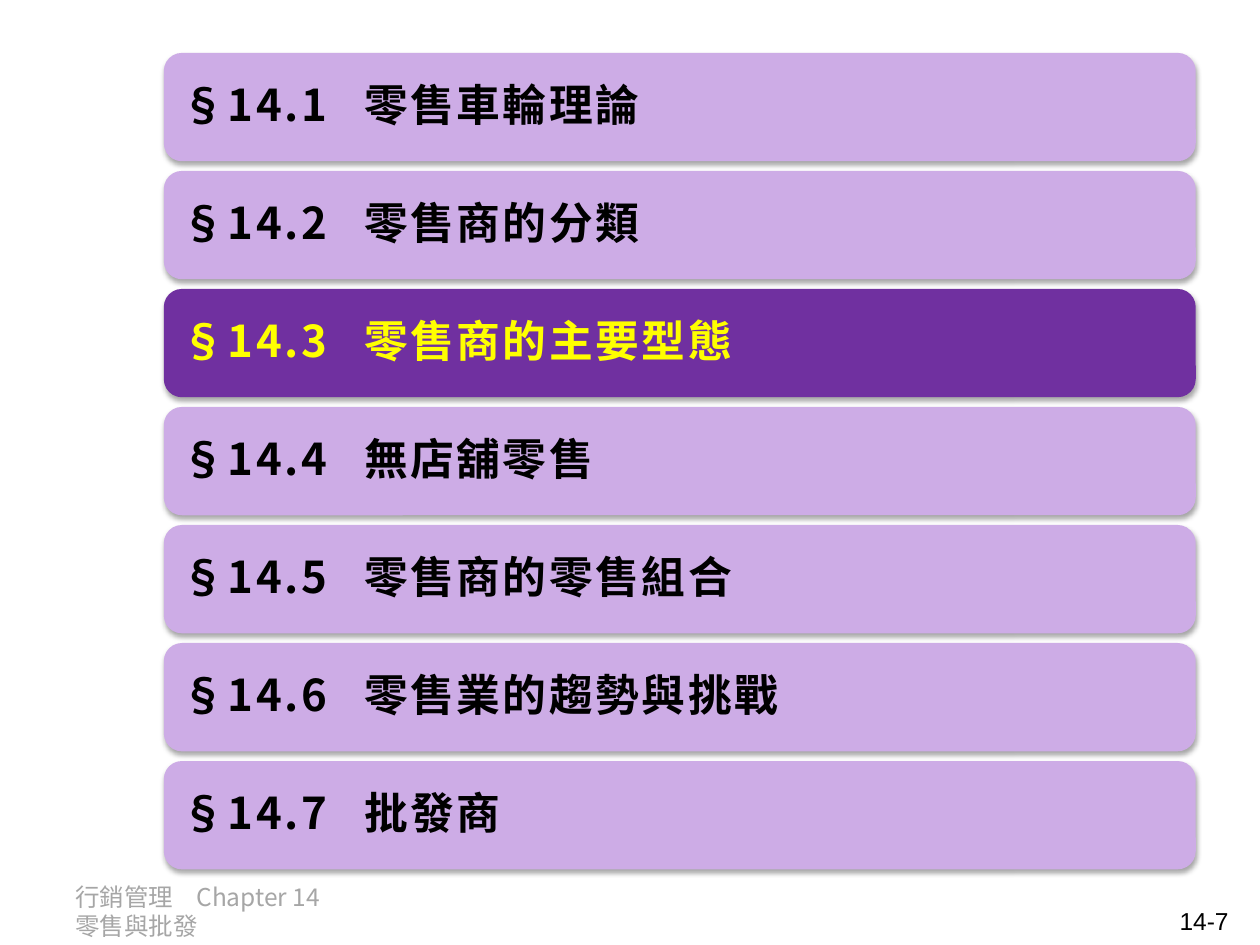
from lxml.etree import SubElement
from pptx import Presentation
from pptx.dml.color import RGBColor
from pptx.enum.shapes import MSO_SHAPE
from pptx.enum.text import MSO_ANCHOR, PP_ALIGN
from pptx.oxml.ns import qn
from pptx.util import Inches, Pt

COLORS = {
    "bar": "CDACE6",
    "active": "7030A0",
    "text": "000000",
    "accent": "FFFF00",
    "footer": "A6A6A6",
}
NOTO = "Noto Sans CJK SC"
TOPICS = [
    "零售車輪理論",
    "零售商的分類",
    "零售商的主要型態",
    "無店舖零售",
    "零售商的零售組合",
    "零售業的趨勢與挑戰",
    "批發商",
]
CURRENT = 3
TOP, PITCH = 0.42, 0.9367


def color(name):
    return RGBColor.from_string(COLORS[name])


def add_tab(para, pos):
    tabs = SubElement(para._p.get_or_add_pPr(), qn("a:tabLst"))
    SubElement(tabs, qn("a:tab"), pos=str(Inches(pos)), algn="l")


def set_font(para, size, name, tint, bold=False, gap=0):
    font = para.font
    font.size, font.bold, font.name = Pt(size), bold, name
    font.color.rgb = color(tint)
    # East Asian face and letter spacing
    props = para._p.pPr.find(qn("a:defRPr"))
    SubElement(props, qn("a:ea"), typeface=NOTO)
    if gap:
        props.set("spc", str(gap))


def add_shadow(shape):
    shape.shadow.inherit = False
    effects = shape._element.spPr.find(qn("a:effectLst"))
    outer = SubElement(effects, qn("a:outerShdw"), blurRad=str(Pt(3.1)),
                       dist=str(Pt(1.8)), dir="5400000", rotWithShape="0")
    shade = SubElement(outer, qn("a:srgbClr"), val=COLORS["text"])
    SubElement(shade, qn("a:alpha"), val="35000")


def add_bar(slide, num, topic):
    active = num == CURRENT
    top = TOP + (num - 1) * PITCH
    bar = slide.shapes.add_shape(MSO_SHAPE.ROUNDED_RECTANGLE, Inches(1.3),
                                 Inches(top), Inches(8.19), Inches(0.86))
    bar.fill.solid()
    bar.fill.fore_color.rgb = color("active" if active else "bar")
    bar.line.fill.background()
    add_shadow(bar)

    # Section number, then topic at a tab stop
    frame = bar.text_frame
    frame.word_wrap = True
    frame.vertical_anchor = MSO_ANCHOR.MIDDLE
    para = frame.paragraphs[0]
    para.alignment = PP_ALIGN.LEFT
    para.line_spacing = 0.9
    add_tab(para, 1.45)
    set_font(para, 25, NOTO, "accent" if active else "text", True, 150)
    para.add_run().text = f"§14.{num}\t"
    title = para.add_run()
    title.text = topic
    title.font.name = "Arial"


def add_note(slide, box, text, name, tint, align=PP_ALIGN.LEFT, tab=None):
    frame = slide.shapes.add_textbox(*map(Inches, box)).text_frame
    frame.word_wrap = True
    para = frame.paragraphs[0]
    para.text = text
    para.alignment = align
    if tab:
        add_tab(para, tab)
    set_font(para, 14, name, tint)


def main():
    deck = Presentation()
    deck.slide_width, deck.slide_height = Inches(10), Inches(7.5)
    slide = deck.slides.add_slide(deck.slide_layouts[6])

    # Footer and page number
    add_note(slide, (0.5, 6.95, 2.45, 0.4), "行銷管理\tChapter 14\v零售與批發",
             NOTO, "footer", tab=0.96)
    add_note(slide, (7.52, 7.14, 2.33, 0.29), "14-7", "Arial", "text",
             PP_ALIGN.RIGHT)

    # Chapter sections
    for num, topic in enumerate(TOPICS, 1):
        add_bar(slide, num, topic)

    deck.save("out.pptx")


if __name__ == "__main__":
    main()
